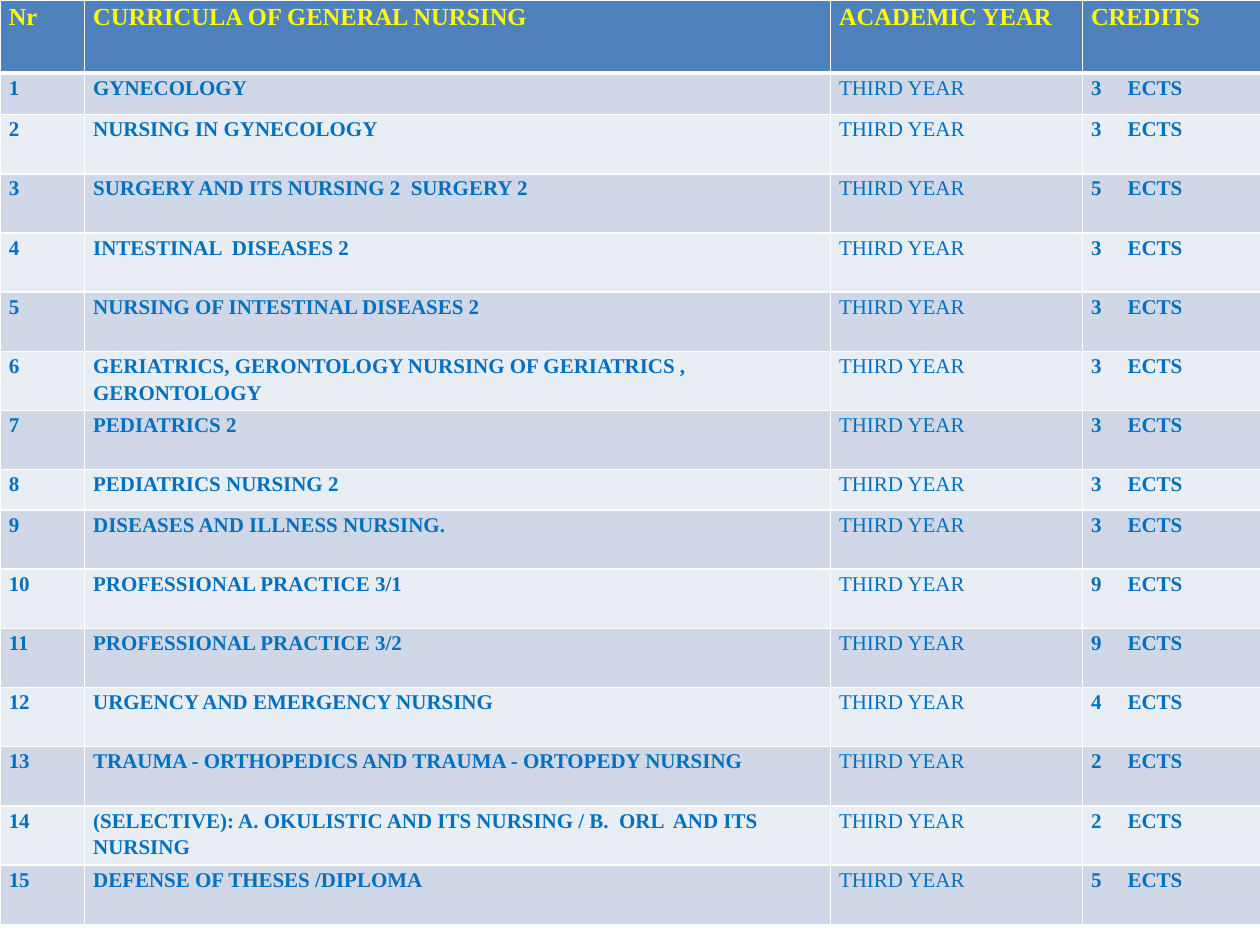
from lxml.etree import SubElement
from pptx import Presentation
from pptx.dml.color import RGBColor
from pptx.oxml.ns import qn
from pptx.util import Inches, Pt

WHITE = RGBColor(0xFF, 0xFF, 0xFF)
HEADER_BLUE = RGBColor(0x4F, 0x81, 0xBD)
BANDS = (RGBColor(0xD0, 0xD8, 0xE8), RGBColor(0xE9, 0xED, 0xF4))
YELLOW = RGBColor(0xFF, 0xFF, 0x00)
TEXT_BLUE = RGBColor(0x00, 0x70, 0xC0)

HEADERS = ("Nr", "CURRICULA OF GENERAL NURSING", "ACADEMIC YEAR", "CREDITS")
YEAR = "THIRD YEAR"
COURSES = [
    ("GYNECOLOGY", 3),
    ("NURSING IN GYNECOLOGY", 3),
    ("SURGERY AND ITS NURSING 2  SURGERY 2", 5),
    ("INTESTINAL  DISEASES 2", 3),
    ("NURSING OF INTESTINAL DISEASES 2", 3),
    ("GERIATRICS, GERONTOLOGY NURSING OF GERIATRICS , GERONTOLOGY", 3),
    ("PEDIATRICS 2", 3),
    ("PEDIATRICS NURSING 2", 3),
    ("DISEASES AND ILLNESS NURSING.", 3),
    ("PROFESSIONAL PRACTICE 3/1", 9),
    ("PROFESSIONAL PRACTICE 3/2", 9),
    ("URGENCY AND EMERGENCY NURSING", 4),
    ("TRAUMA - ORTHOPEDICS AND TRAUMA - ORTOPEDY NURSING", 2),
    ("(SELECTIVE): A. OKULISTIC AND ITS NURSING / B.  ORL  AND ITS NURSING", 2),
    ("DEFENSE OF THESES /DIPLOMA", 5),
]
COL_WIDTHS = (0.67, 5.92, 2, 1.42)
ROW_HEIGHT = 0.47
SPECIAL_HEIGHTS = {0: 0.58, 1: 0.33, 8: 0.32}
CELL_FORMAT = {"margin_left": Inches(0.07), "margin_right": Inches(0.07),
               "margin_top": 0, "margin_bottom": 0}
HEADER_FONT = {"name": "Times New Roman", "size": Pt(14), "bold": True}
BODY_FONT = {**HEADER_FONT, "size": Pt(12)}
YEAR_FONT = {**BODY_FONT, "bold": False}


def set_attrs(obj, values):
    for name, value in values.items():
        setattr(obj, name, value)


def set_borders(cell, top=1, bottom=1):
    tc_pr = cell._tc.get_or_add_tcPr()
    for side, width in (("L", 1), ("R", 1), ("T", top), ("B", bottom)):
        ln = SubElement(tc_pr, qn(f"a:ln{side}"), w=str(Pt(width)))
        fill = SubElement(ln, qn("a:solidFill"))
        SubElement(fill, qn("a:srgbClr"), val=str(WHITE))


def add_tab_stop(p, position):
    tabs = SubElement(p._p.get_or_add_pPr(), qn("a:tabLst"))
    SubElement(tabs, qn("a:tab"), pos=str(position), algn="l")


def fill_cell(cell, text, font, color, background):
    set_attrs(cell, CELL_FORMAT)
    cell.fill.solid()
    cell.fill.fore_color.rgb = background
    p = cell.text_frame.paragraphs[0]
    p.line_spacing = 1.15
    r = p.add_run()
    r.text = text
    set_attrs(r.font, font)
    r.font.color.rgb = color
    if "\t" in text:
        add_tab_stop(p, Inches(0.29))


def add_curriculum_table(s, left, top, width, height):
    rows = [HEADERS] + [(str(n), course, YEAR, f"{credits}\tECTS")
                        for n, (course, credits) in enumerate(COURSES, 1)]
    table = s.shapes.add_table(len(rows), len(HEADERS),
                               left, top, width, height).table
    for column, col_width in zip(table.columns, COL_WIDTHS):
        column.width = Inches(col_width)
    for i, texts in enumerate(rows):
        table.rows[i].height = Inches(SPECIAL_HEIGHTS.get(i, ROW_HEIGHT))
        for j, text in enumerate(texts):
            cell = table.cell(i, j)
            set_borders(cell, top=3 if i == 1 else 1, bottom=3 if i == 0 else 1)
            if i == 0:
                fill_cell(cell, text, HEADER_FONT, YELLOW, HEADER_BLUE)
            else:
                font = YEAR_FONT if text == YEAR else BODY_FONT
                fill_cell(cell, text, font, TEXT_BLUE, BANDS[(i - 1) % 2])


def main():
    prs = Presentation()
    prs.slide_width, prs.slide_height = Inches(10), Inches(7.5)
    s = prs.slides.add_slide(prs.slide_layouts[6])
    add_curriculum_table(s, 0, 0, Inches(10), Inches(7.33))
    prs.save("out.pptx")


if __name__ == "__main__":
    main()
